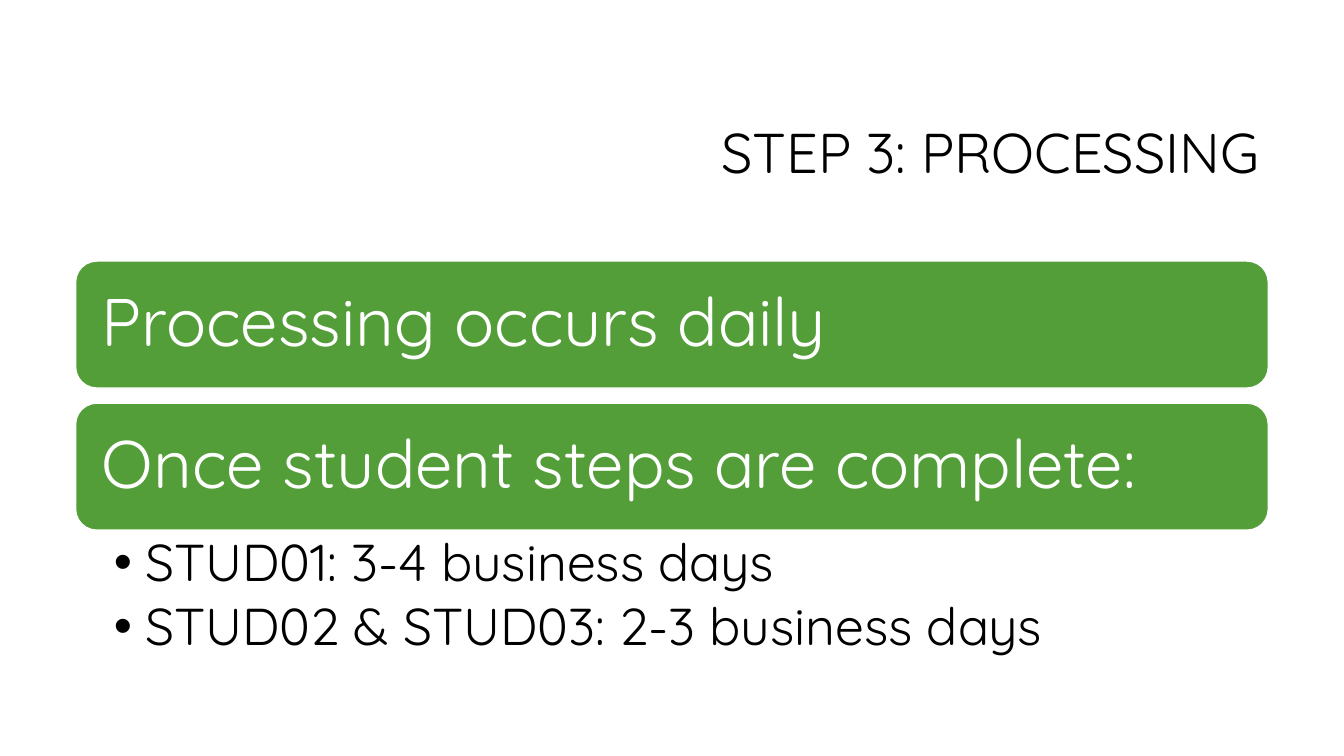
from dataclasses import dataclass

from lxml.etree import SubElement
from pptx import Presentation
from pptx.dml.color import RGBColor
from pptx.enum.shapes import MSO_SHAPE as Shape
from pptx.enum.text import MSO_ANCHOR as Anchor, PP_ALIGN as Align
from pptx.oxml.ns import qn
from pptx.util import Inches, Pt

# Content
TITLE = "STEP 3: PROCESSING"
BANNERS = ["Processing occurs daily", "Once student steps are complete:"]
TURNAROUND = ["STUD01: 3-4 business days", "STUD02 & STUD03: 2-3 business days"]


@dataclass(frozen=True)
class Theme:
    font: str = "Quicksand"
    green: RGBColor = RGBColor(0x54, 0x9E, 0x39)
    white: RGBColor = RGBColor(0xFF, 0xFF, 0xFF)
    black: RGBColor = RGBColor(0, 0, 0)
    title_size: float = 40
    banner_size: float = 48
    bullet_size: float = 37


THEME = Theme()

# Layout in inches: one column of stacked rows
SLIDE_WIDTH, SLIDE_HEIGHT = 13.33, 7.5
LEFT, WIDTH = 0.75, 11.83
TOP, BANNER_HEIGHT, ROW_STEP = 2.59, 1.26, 1.41
LIST_TOP = TOP + ROW_STEP * (len(BANNERS) - 1) + BANNER_HEIGHT
LIST_HEIGHT = 1.36
BULLET_INDENT = 0.31


def add_bullet(paragraph):
    properties = paragraph._p.get_or_add_pPr()
    properties.set("marL", str(Inches(BULLET_INDENT)))
    properties.set("indent", str(Inches(-BULLET_INDENT)))
    SubElement(properties, qn("a:buFont")).set("typeface", "Arial")
    SubElement(properties, qn("a:buChar")).set("char", "•")


def write(shape, lines, size, color, margins, anchor=Anchor.MIDDLE,
          align=Align.LEFT, bulleted=False, gap=0):
    """Fill a shape with evenly formatted paragraphs."""
    horizontal, vertical = Inches(margins[0]), Inches(margins[1])
    frame = shape.text_frame
    frame_format = {
        "word_wrap": True, "vertical_anchor": anchor,
        "margin_left": horizontal, "margin_right": horizontal,
        "margin_top": vertical, "margin_bottom": vertical,
    }
    for name, value in frame_format.items():
        setattr(frame, name, value)
    for index, line in enumerate(lines):
        paragraph = frame.add_paragraph() if index else frame.paragraphs[0]
        paragraph_format = {"alignment": align, "line_spacing": 0.9,
                            "space_after": Pt(gap), "level": int(bulleted)}
        for name, value in paragraph_format.items():
            setattr(paragraph, name, value)
        if bulleted:
            add_bullet(paragraph)
        run = paragraph.add_run()
        run.text = line
        for name, value in {"name": THEME.font, "size": Pt(size)}.items():
            setattr(run.font, name, value)
        run.font.color.rgb = color


def main():
    presentation = Presentation()
    presentation.slide_width = Inches(SLIDE_WIDTH)
    presentation.slide_height = Inches(SLIDE_HEIGHT)
    slide = presentation.slides.add_slide(presentation.slide_layouts[6])

    # Title
    title = slide.shapes.add_textbox(
        Inches(3.17), Inches(0.84), Inches(9.42), Inches(1.41))
    write(title, [TITLE], THEME.title_size, THEME.black, (0.1, 0.05),
          align=Align.RIGHT)

    # Green banners
    for row, text in enumerate(BANNERS):
        banner = slide.shapes.add_shape(
            Shape.ROUNDED_RECTANGLE, Inches(LEFT), Inches(TOP + row * ROW_STEP),
            Inches(WIDTH), Inches(BANNER_HEIGHT))
        banner.shadow.inherit = False
        banner.fill.solid()
        banner.fill.fore_color.rgb = THEME.green
        banner.line.color.rgb = THEME.white
        banner.line.width = Pt(1)
        write(banner, [text], THEME.banner_size, THEME.white, (0.2, 0.2))

    # Turnaround times
    times = slide.shapes.add_textbox(
        Inches(LEFT), Inches(LIST_TOP), Inches(WIDTH), Inches(LIST_HEIGHT))
    write(times, TURNAROUND, THEME.bullet_size, THEME.black, (0.38, 0.07),
          anchor=Anchor.TOP, bulleted=True, gap=5.5)

    presentation.save("out.pptx")


if __name__ == "__main__":
    main()
